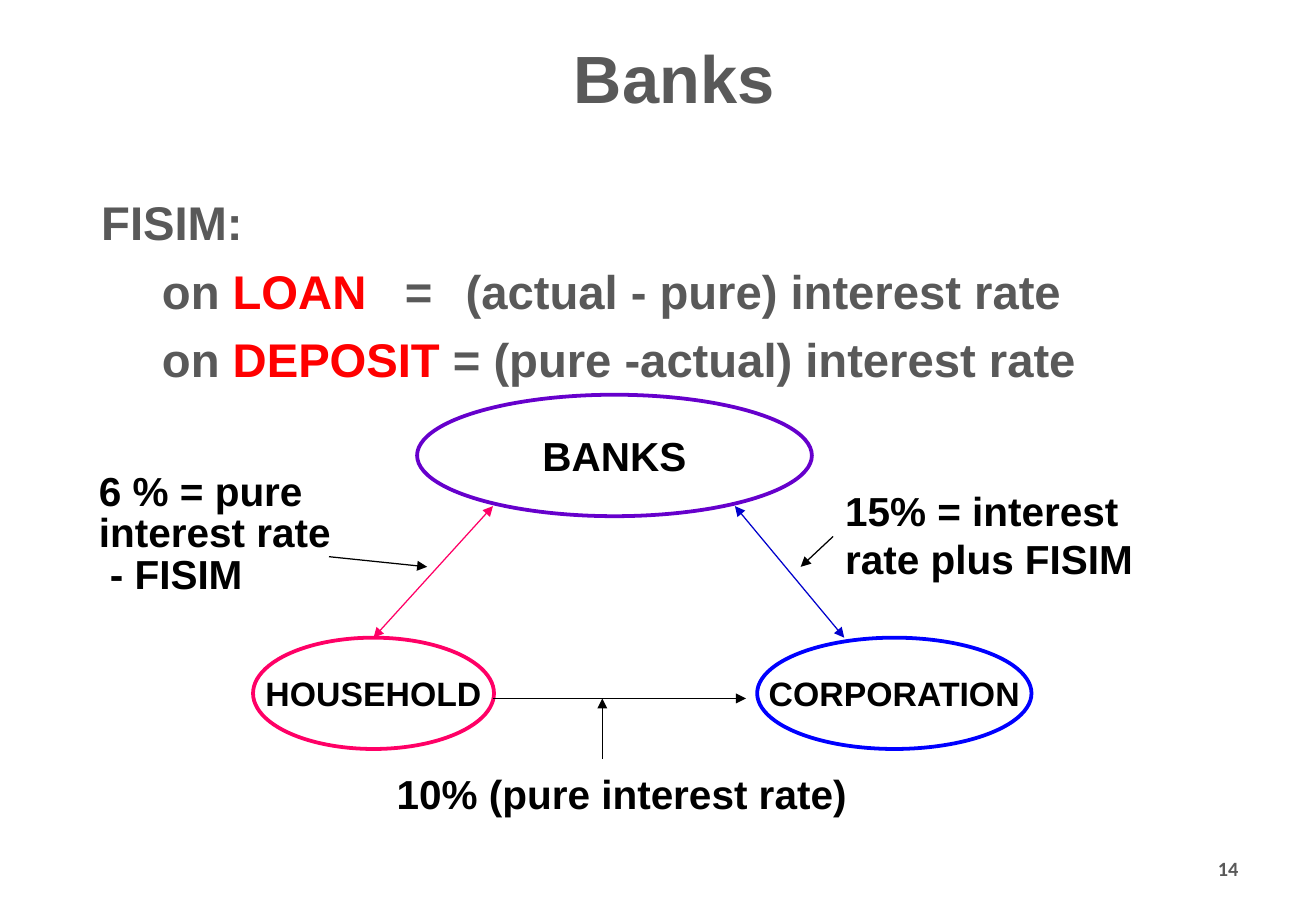
from dataclasses import dataclass

from lxml import etree
from pptx import Presentation
from pptx.dml.color import RGBColor
from pptx.enum.shapes import MSO_CONNECTOR, MSO_SHAPE
from pptx.enum.text import MSO_ANCHOR, PP_ALIGN
from pptx.oxml.ns import qn
from pptx.util import Inches, Pt

OVAL, STRAIGHT = MSO_SHAPE.OVAL, MSO_CONNECTOR.STRAIGHT
TOP, MIDDLE = MSO_ANCHOR.TOP, MSO_ANCHOR.MIDDLE
LEFT, CENTER, RIGHT = PP_ALIGN.LEFT, PP_ALIGN.CENTER, PP_ALIGN.RIGHT
COLS, ROWS = 130, 90
UNIT = Inches(7.5) / ROWS


@dataclass(frozen=True)
class Theme:
    """Colours, fonts and type sizes of the slide."""
    gray: str = "595959"
    black: str = "000000"
    red: str = "FF0000"
    purple: str = "6600CC"
    pink: str = "FF0066"
    blue: str = "0000FF"
    navy: str = "0000CC"
    font: str = "Arial"
    number_font: str = "Calibri"
    title: float = 39.6
    body: float = 28
    label: float = 24
    small: float = 20
    number: float = 12
    outline: float = 2.25
    thin: float = 0.75


@dataclass(frozen=True)
class Box:
    """An area in grid columns and rows."""
    x: float
    y: float
    w: float
    h: float

    def sub(self, x, y, w, h):
        """Return an area placed relative to this one."""
        return Box(self.x + x, self.y + y, w, h)

    def point(self, x, y):
        """Return a point of this area in slide lengths."""
        return round((self.x + x) * UNIT), round((self.y + y) * UNIT)

    def emu(self):
        """Return left, top, width and height in slide lengths."""
        return [round(v * UNIT) for v in (self.x, self.y, self.w, self.h)]


T = Theme()


def add_run(p, text, size, color, font=T.font):
    """Add one bold run to a paragraph."""
    r = p.add_run()
    r.text = text
    r.font.name, r.font.size, r.font.bold = font, Pt(size), True
    r.font.color.rgb = RGBColor.from_string(color)


def move(sp, box):
    """Move a placeholder to an area."""
    sp.left, sp.top, sp.width, sp.height = box.emu()


def add_text(slide, box, lines, size, color=T.black, font=T.font,
             align=LEFT, anchor=TOP, spacing=None):
    """Add a wrapped text box, one paragraph per line."""
    tf = slide.shapes.add_textbox(*box.emu()).text_frame
    tf.word_wrap, tf.vertical_anchor = True, anchor
    for i, line in enumerate(lines):
        p = tf.add_paragraph() if i else tf.paragraphs[0]
        p.alignment, p.line_spacing = align, spacing
        add_run(p, line, size, color, font)
    return tf


def add_oval(slide, box, text, size, color):
    """Add an outlined ellipse with a centred name."""
    sp = slide.shapes.add_shape(OVAL, *box.emu())
    sp.shadow.inherit = False
    sp.fill.background()
    sp.line.color.rgb = RGBColor.from_string(color)
    sp.line.width = Pt(T.outline)
    tf = sp.text_frame
    tf.word_wrap, tf.vertical_anchor = False, MIDDLE
    p = tf.paragraphs[0]
    p.alignment = CENTER
    add_run(p, text, size, T.black)
    return sp


def add_arrow(slide, start, end, color=T.black, ends=("tailEnd",)):
    """Add a thin straight arrow."""
    sp = slide.shapes.add_connector(STRAIGHT, *start, *end)
    sp.line.color.rgb = RGBColor.from_string(color)
    sp.line.width = Pt(T.thin)
    ln = sp.line._get_or_add_ln()
    for tag in ends:
        etree.SubElement(ln, qn(f"a:{tag}"), type="triangle")
    etree.SubElement(sp._element.spPr, qn("a:effectLst"))
    return sp


def fill_title(slide, box):
    """Place the slide title."""
    sp = slide.shapes.title
    move(sp, box)
    sp.text_frame.vertical_anchor = MIDDLE
    p = sp.text_frame.paragraphs[0]
    p.alignment = CENTER
    add_run(p, "Banks", T.title, T.gray)


def fill_body(slide, box):
    """Place the FISIM definitions, aligned on tab stops."""
    lines = [
        [("FISIM:", T.gray)],
        [("\ton ", T.gray), ("LOAN", T.red),
         ("\t=\t(actual - pure) interest rate", T.gray)],
        [("\ton ", T.gray), ("DEPOSIT", T.red),
         (" = (pure -actual) interest rate", T.gray)],
    ]
    sp = slide.placeholders[1]
    move(sp, box)
    tf = sp.text_frame
    for i, runs in enumerate(lines):
        p = tf.add_paragraph() if i else tf.paragraphs[0]
        pPr = p._p.get_or_add_pPr()
        pPr.set("marL", "0")
        pPr.set("indent", "0")
        etree.SubElement(pPr, qn("a:buNone"))
        tabs = etree.SubElement(pPr, qn("a:tabLst"))
        for stop in (0.38, 2.68, 3.12):
            etree.SubElement(tabs, qn("a:tab"), pos=str(Inches(stop)), algn="l")
        p.space_before = Pt(7 if i else 0)
        for text, color in runs:
            add_run(p, text, T.body, color)


def draw_diagram(slide, box):
    """Draw the flows between banks, household and corporation."""
    both = ("headEnd", "tailEnd")
    add_oval(slide, box.sub(33.2, 0, 39, 12), "BANKS", T.label, T.purple)
    household = add_oval(slide, box.sub(17, 24, 23.8, 11), "HOUSEHOLD", T.small, T.pink)
    add_oval(slide, box.sub(66.8, 24, 27.1, 11), "CORPORATION", T.small, T.blue)

    deposit = add_arrow(slide, box.point(28.9, 24), box.point(40.7, 11), T.pink, both)
    deposit.begin_connect(household, 0)
    add_arrow(slide, box.point(64.6, 11), box.point(75.4, 24), T.navy, both)
    for start, end in (((40.7, 30), (65.7, 30)), ((24.5, 16), (34.2, 17)),
                       ((74.3, 14), (71.1, 17)), ((51.5, 36), (51.5, 30))):
        add_arrow(slide, box.point(*start), box.point(*end))

    add_text(slide, box.sub(30, 36.4, 56.8, 6), ["10% (pure interest rate)"], T.label)
    add_text(slide, box.sub(74.3, 8.4, 34.7, 10.8),
             ["15% = interest rate plus FISIM"], T.label)
    tf = add_text(slide, box.sub(0.6, 7.2, 29.3, 13.4),
                  ["6 % = pure interest rate", "- FISIM"], T.label, spacing=0.85)
    tf.paragraphs[1]._p.get_or_add_pPr().set("marL", str(Inches(0.09)))


def main():
    """Build and save the slide."""
    prs = Presentation()
    prs.slide_width, prs.slide_height = round(COLS * UNIT), round(ROWS * UNIT)
    slide = prs.slides.add_slide(prs.slide_layouts[1])
    fill_title(slide, Box(12, 3, 109.2, 9.2))
    fill_body(slide, Box(8.8, 18.5, 112, 66))
    draw_diagram(slide, Box(8, 39, 110, 42))
    add_text(slide, Box(93.1, 83.4, 30.4, 4.8), ["14"], T.number, T.gray,
             T.number_font, RIGHT, MIDDLE)
    prs.save("out.pptx")


if __name__ == "__main__":
    main()
